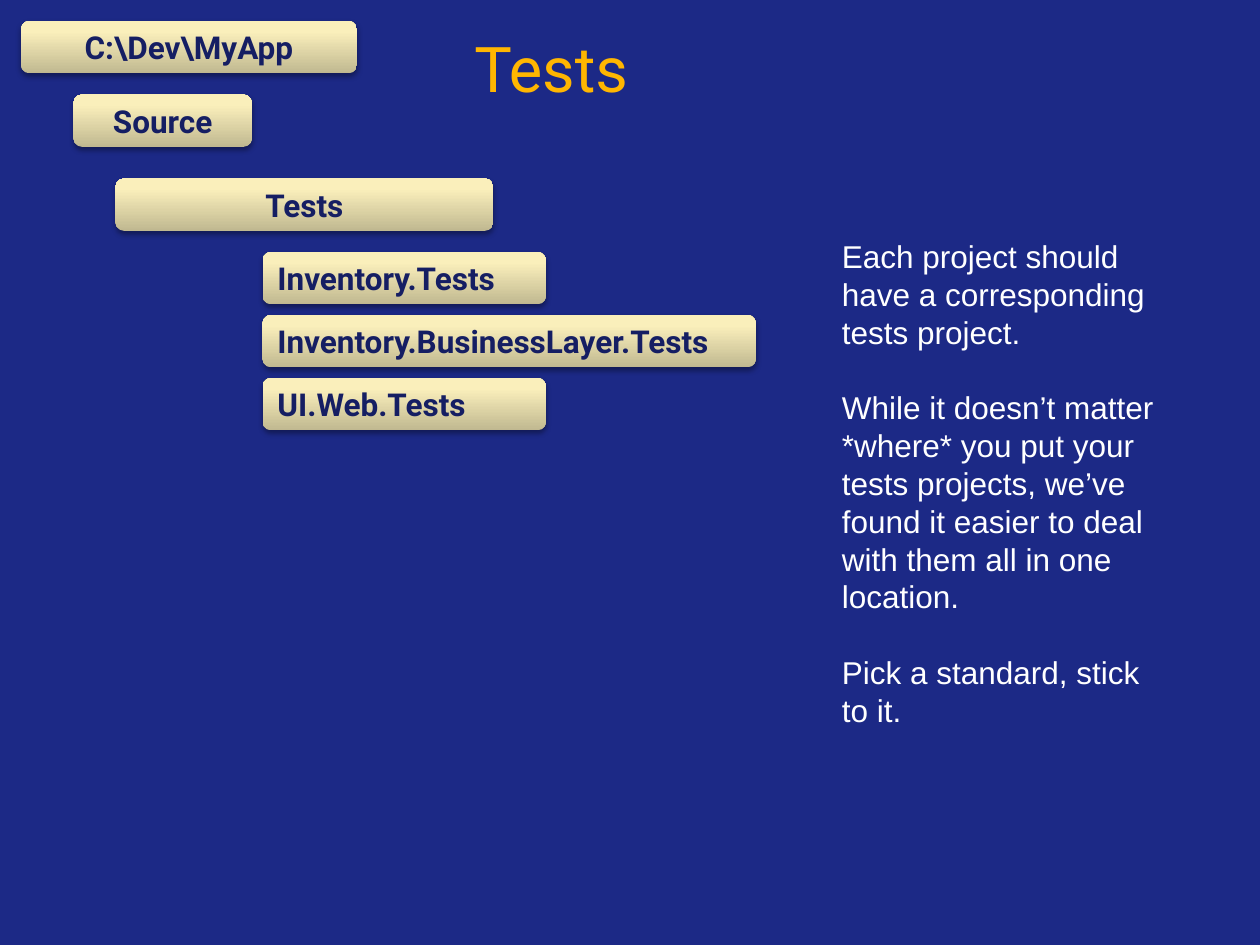
from pptx import Presentation
from pptx.dml.color import RGBColor
from pptx.enum.shapes import MSO_SHAPE as SHAPE
from pptx.enum.text import MSO_ANCHOR as ANCHOR, MSO_AUTO_SIZE as AUTO_SIZE, PP_ALIGN as ALIGN
from pptx.oxml import parse_xml
from pptx.oxml.ns import nsdecls
from pptx.util import Pt

COLORS = {
    "background": "1C2986",
    "title": "FFB601",
    "notes": "FFFFFF",
    "folder_text": "151E63",
    "folder_bottom": "C0B890",
    "folder_middle": "FAEFBB",
    "folder_top": "FCF1BA",
    "shadow": "000000",
}
GRADIENT = [(0, "folder_bottom"), (80, "folder_middle"), (100, "folder_top")]


def style_font(paragraph, name, size, color, bold=False):
    for run in paragraph.runs:
        run.font.name = name
        run.font.size = Pt(size)
        run.font.bold = bold
        run.font.color.rgb = RGBColor.from_string(COLORS[color])


def add_folder(label, left, top, width, align):
    folder = slide.shapes.add_shape(
        SHAPE.ROUNDED_RECTANGLE, Pt(left), Pt(top), Pt(width), Pt(30))
    folder.line.fill.background()

    # Three-stop gradient running upwards, and a soft shadow below
    stops = "".join(
        f'<a:gs pos="{position * 1000}"><a:srgbClr val="{COLORS[key]}"/></a:gs>'
        for position, key in GRADIENT)
    properties = folder._element.spPr
    properties.insert(2, parse_xml(
        f'<a:gradFill {nsdecls("a")} rotWithShape="1"><a:gsLst>{stops}</a:gsLst>'
        '<a:lin ang="16200000" scaled="0"/></a:gradFill>'))
    properties.append(parse_xml(
        f'<a:effectLst {nsdecls("a")}>'
        f'<a:outerShdw blurRad="{Pt(3.1)}" dist="{Pt(1.8)}" dir="5400000" rotWithShape="0">'
        f'<a:srgbClr val="{COLORS["shadow"]}"><a:alpha val="35000"/></a:srgbClr>'
        '</a:outerShdw></a:effectLst>'))

    frame = folder.text_frame
    frame.text = label
    frame.vertical_anchor = ANCHOR.MIDDLE
    frame.paragraphs[0].alignment = align
    style_font(frame.paragraphs[0], "Roboto", 18, "folder_text", bold=True)


# Slide and background
deck = Presentation()
deck.slide_width, deck.slide_height = Pt(720), Pt(540)
slide = deck.slides.add_slide(deck.slide_layouts[6])
slide.background.fill.solid()
slide.background.fill.fore_color.rgb = RGBColor.from_string(COLORS["background"])

# Parent folders
for label, left, top, width in [
    ("C:\\Dev\\MyApp", 12, 12, 192),
    ("Source", 42, 54, 102),
    ("Tests", 66, 102, 216),
]:
    add_folder(label, left, top, width, ALIGN.CENTER)

# Title
title = slide.shapes.add_textbox(Pt(264), Pt(18), Pt(426), Pt(86)).text_frame
title.word_wrap = True
title.text = "Tests"
title.paragraphs[0].line_spacing = 0.9
style_font(title.paragraphs[0], "Roboto", 36, "title")

# Test projects
for row, (label, width) in enumerate([
    ("Inventory.Tests", 162),
    ("Inventory.BusinessLayer.Tests", 282),
    ("UI.Web.Tests", 162),
]):
    add_folder(label, 150, 144 + 36 * row, width, ALIGN.LEFT)

# Notes beside the tree, one blank line's height apart
notes = slide.shapes.add_textbox(Pt(474), Pt(132), Pt(204), Pt(291)).text_frame
notes.word_wrap = True
notes.auto_size = AUTO_SIZE.SHAPE_TO_FIT_TEXT
notes.text = "\n".join([
    "Each project should have a corresponding tests project.",
    "While it doesn’t matter *where* you put your tests projects, "
    "we’ve found it easier to deal with them all in one location.",
    "Pick a standard, stick to it.",
])
for index, paragraph in enumerate(notes.paragraphs):
    if index:
        paragraph.space_before = Pt(21.6)
    style_font(paragraph, "Arial", 18, "notes")

deck.save("out.pptx")
